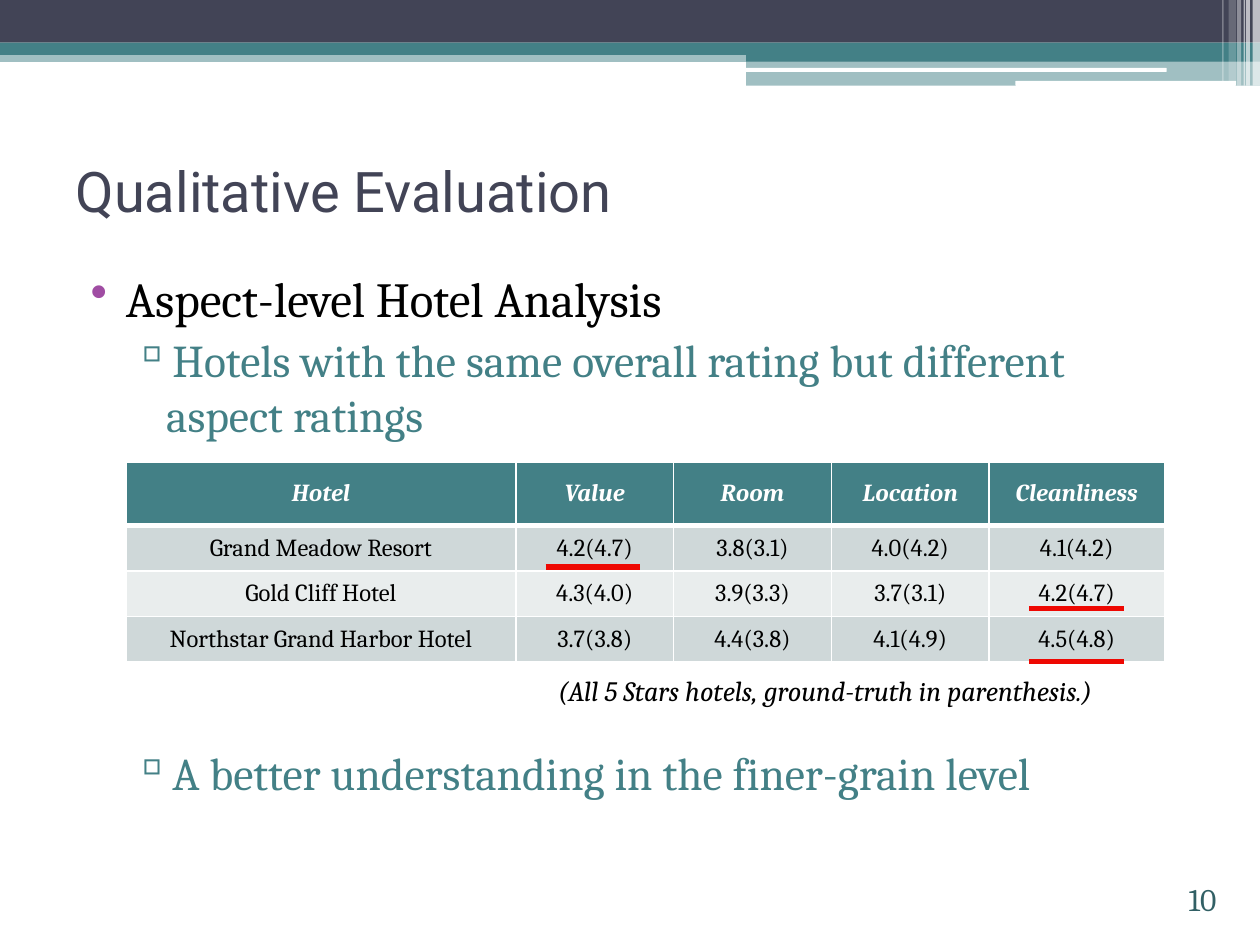
from lxml import etree
from pptx import Presentation
from pptx.dml.color import RGBColor
from pptx.enum.shapes import MSO_CONNECTOR, MSO_SHAPE
from pptx.enum.text import MSO_ANCHOR, PP_ALIGN
from pptx.oxml.ns import qn
from pptx.util import Cm, Pt

RECT, ROUNDED = MSO_SHAPE.RECTANGLE, MSO_SHAPE.ROUNDED_RECTANGLE
STRAIGHT = MSO_CONNECTOR.STRAIGHT
LEFT, CENTER, RIGHT = PP_ALIGN.LEFT, PP_ALIGN.CENTER, PP_ALIGN.RIGHT
TOP, MIDDLE, BOTTOM = MSO_ANCHOR.TOP, MSO_ANCHOR.MIDDLE, MSO_ANCHOR.BOTTOM

NAVY, TEAL, WHITE, BLACK = "424456", "438086", "FFFFFF", "000000"
PURPLE, RED, DARK_TEAL = "A04DA3", "EE0802", "326065"
BAND_FILLS = ("CFD8D9", "E9EDED")
SERIF, SANS = "Cambria", "Roboto"

HEADER_BANDS = [
    (RECT, 0, 1.02, 25.4, 0.23, TEAL, 50),
    (RECT, 0, 0, 25.4, 0.86, NAVY, 100),
    (RECT, 0, 0.86, 25.4, 0.25, TEAL, 100),
    (RECT, 15.04, 0.99, 10.36, 0.25, TEAL, 100),
    (RECT, 15.04, 1.22, 10.36, 0.51, TEAL, 50),
    (ROUNDED, 15.01, 1.37, 8.51, 0.08, WHITE, 100),
    (ROUNDED, 20.47, 1.63, 4.45, 0.1, WHITE, 100),
]
CORNER_STRIPES = [
    (25.25, 0.15, 1.73, 65),
    (25.12, 0.08, 1.73, 65),
    (25.07, 0.03, 1.73, 60),
    (24.94, 0.08, 1.73, 40),
    (24.77, 0.15, 1.63, 20),
    (24.64, 0.03, 1.63, 30),
]
RATINGS = [
    ("Hotel", "Value", "Room", "Location", "Cleanliness"),
    ("Grand Meadow Resort", "4.2(4.7)", "3.8(3.1)", "4.0(4.2)", "4.1(4.2)"),
    ("Gold Cliff Hotel", "4.3(4.0)", "3.9(3.3)", "3.7(3.1)", "4.2(4.7)"),
    ("Northstar Grand Harbor Hotel", "3.7(3.8)", "4.4(3.8)", "4.1(4.9)", "4.5(4.8)"),
]
COLUMN_WIDTHS = (7.86, 3.18, 3.18, 3.18, 3.53)
ROW_HEIGHTS = (1.27, 0.92, 0.92, 0.92)
UNDERLINES = [(20.75, 13.34), (11, 11.43), (20.75, 12.27)]


def color(value):
    return RGBColor.from_string(value)


def add_band(slide, kind, left, top, width, height, fill, opacity):
    band = slide.shapes.add_shape(kind, Cm(left), Cm(top), Cm(width), Cm(height))
    band.shadow.inherit = False
    band.line.fill.background()
    band.fill.solid()
    band.fill.fore_color.rgb = color(fill)
    if opacity < 100:
        tint = band._element.spPr.find(".//" + qn("a:srgbClr"))
        etree.SubElement(tint, qn("a:alpha"), val=str(opacity * 1000))


def add_run(paragraph, text, size, ink, font=SERIF, bold=False, italic=False):
    run = paragraph.add_run()
    run.text = text
    run.font.name = font
    run.font.size = Pt(size)
    run.font.color.rgb = color(ink)
    run.font.bold = bold
    run.font.italic = italic


def add_box(slide, left, top, width, height, anchor=TOP):
    frame = slide.shapes.add_textbox(Cm(left), Cm(top), Cm(width), Cm(height)).text_frame
    frame.word_wrap = True
    frame.vertical_anchor = anchor
    return frame


def add_title(slide):
    title = slide.shapes.title
    title.left, title.top, title.width, title.height = Cm(1.27), Cm(2.34), Cm(22.86), Cm(2.97)
    title.text_frame.vertical_anchor = MIDDLE
    heading = title.text_frame.paragraphs[0]
    heading.alignment = LEFT
    add_run(heading, "Qualitative Evaluation", 32, NAVY, SANS)


def add_bullet(paragraph, symbol, symbol_color, margin, hanging):
    properties = paragraph._p.get_or_add_pPr()
    properties.set("marL", str(Cm(margin)))
    properties.set("indent", str(-Cm(hanging)))
    bullet_color = etree.SubElement(properties, qn("a:buClr"))
    etree.SubElement(bullet_color, qn("a:srgbClr"), val=symbol_color)
    etree.SubElement(properties, qn("a:buChar"), char=symbol)


def add_points(slide):
    frame = add_box(slide, 1.27, 5.28, 22.86, 13.13)
    topic = frame.paragraphs[0]
    add_bullet(topic, "•", PURPLE, 1.02, 0.71)
    add_run(topic, "Aspect-level Hotel Analysis", 28, BLACK)
    details = [
        ("Hotels with the same overall rating but different aspect ratings", 3),
        ("A better understanding in the finer-grain level", 173.5),
    ]
    for text, gap in details:
        detail = frame.add_paragraph()
        detail.level = 1
        add_bullet(detail, "▫", TEAL, 1.83, 0.69)
        detail.space_before = Pt(gap)
        add_run(detail, text, 26, TEAL)


def add_border(cell, side, width):
    properties = cell._tc.get_or_add_tcPr()
    border = etree.SubElement(properties, qn("a:" + side), w=str(Pt(width)))
    fill = etree.SubElement(border, qn("a:solidFill"))
    etree.SubElement(fill, qn("a:srgbClr"), val=WHITE)


def format_cell(cell, text, row):
    header = row == 0
    for side in ("lnL", "lnR", "lnT", "lnB"):
        heavy = (row, side) in ((0, "lnB"), (1, "lnT"))
        add_border(cell, side, 3 if heavy else 1)
    cell.fill.solid()
    cell.fill.fore_color.rgb = color(TEAL if header else BAND_FILLS[(row - 1) % 2])
    cell.vertical_anchor = MIDDLE
    entry = cell.text_frame.paragraphs[0]
    entry.alignment = CENTER
    add_run(entry, text, 14, WHITE if header else BLACK, bold=header, italic=header)


def add_ratings(slide):
    table = slide.shapes.add_table(
        len(RATINGS), len(COLUMN_WIDTHS), Cm(2.54), Cm(9.32),
        Cm(sum(COLUMN_WIDTHS)), Cm(sum(ROW_HEIGHTS)),
    ).table
    for column, width in zip(table.columns, COLUMN_WIDTHS):
        column.width = Cm(width)
    for row, height in zip(table.rows, ROW_HEIGHTS):
        row.height = Cm(height)
    for row, hotel in enumerate(RATINGS):
        for column, text in enumerate(hotel):
            format_cell(table.cell(row, column), text, row)


def add_underline(slide, left, top):
    underline = slide.shapes.add_connector(STRAIGHT, Cm(left), Cm(top), Cm(left + 1.9), Cm(top))
    underline.line.color.rgb = color(RED)
    underline.line.width = Pt(3)
    etree.SubElement(underline._element.spPr, qn("a:effectLst"))


def main():
    deck = Presentation()
    deck.slide_width, deck.slide_height = Cm(25.4), Cm(19.05)
    slide = deck.slides.add_slide(deck.slide_layouts[5])
    for band in HEADER_BANDS:
        add_band(slide, *band)
    for left, width, height, opacity in CORNER_STRIPES:
        add_band(slide, RECT, left, 0, width, height, WHITE, opacity)
    add_title(slide)
    add_points(slide)
    page = add_box(slide, 22.66, 17.6, 2.11, 1.02, BOTTOM).paragraphs[0]
    page.alignment = RIGHT
    add_run(page, "10", 18, DARK_TEAL)
    add_ratings(slide)
    caption = add_box(slide, 11, 13.46, 13.13, 0.94).paragraphs[0]
    add_run(caption, "(All 5 Stars hotels, ground-truth in parenthesis.)", 16, BLACK, italic=True)
    for left, top in UNDERLINES:
        add_underline(slide, left, top)
    deck.save("out.pptx")


if __name__ == "__main__":
    main()
